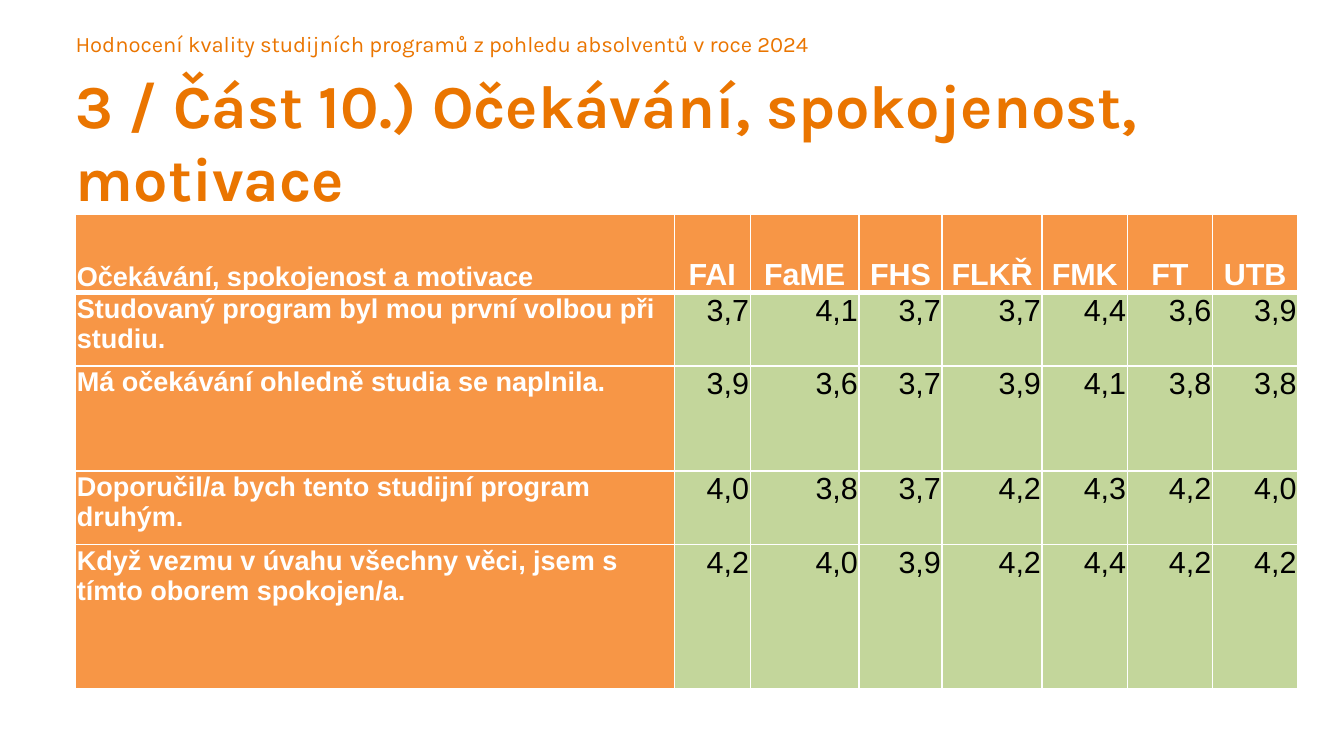
from pptx import Presentation
from pptx.dml.color import RGBColor
from pptx.enum.text import MSO_ANCHOR as ANCHOR, MSO_AUTO_SIZE as AUTO, PP_ALIGN as ALIGN
from pptx.oxml.ns import qn
from pptx.util import Pt
from lxml.etree import SubElement

COLORS = {"brand": "EA7500", "label": "F79646", "value": "C3D69B",
          "white": "FFFFFF", "black": "000000"}

HEADER = ["Očekávání, spokojenost a motivace",
          "FAI", "FaME", "FHS", "FLKŘ", "FMK", "FT", "UTB"]
RATINGS = [
    ["Studovaný program byl mou první volbou při studiu.",
     "3,7", "4,1", "3,7", "3,7", "4,4", "3,6", "3,9"],
    ["Má očekávání ohledně studia se naplnila.",
     "3,9", "3,6", "3,7", "3,9", "4,1", "3,8", "3,8"],
    ["Doporučil/a bych tento studijní program druhým.",
     "4,0", "3,8", "3,7", "4,2", "4,3", "4,2", "4,0"],
    ["Když vezmu v úvahu všechny věci, jsem s tímto oborem spokojen/a.",
     "4,2", "4,0", "3,9", "4,2", "4,4", "4,2", "4,2"],
]
COL_WIDTHS = [353.5, 44.8, 64.3, 49, 59.1, 50.3, 50.3, 50.3]
ROW_HEIGHTS = [46, 43.4, 62, 43.4, 85]

LABEL = {"size": 16, "bold": True, "color": "white", "fill": "label",
         "align": ALIGN.LEFT, "anchor": ANCHOR.TOP, "margins": (0.75, 0.75, 0.75, 0)}
CORNER = {**LABEL, "anchor": ANCHOR.BOTTOM}
FACULTY = {**CORNER, "size": 18, "align": ALIGN.CENTER, "spacing": 1.5,
           "margins": (3.6, 0, 3.6, 0)}
VALUE = {**LABEL, "size": 18, "bold": False, "color": "black", "fill": "value",
         "align": ALIGN.RIGHT}


def rgb(name):
    return RGBColor.from_string(COLORS[name])


def set_margins(target, margins):
    for side, margin in zip(("left", "top", "right", "bottom"), margins):
        setattr(target, f"margin_{side}", Pt(margin))


def write(tf, text, font, size, bold, color, align=ALIGN.LEFT, spacing=None):
    p = tf.paragraphs[0]
    p.alignment = align
    if spacing:
        p.line_spacing = spacing
    r = p.add_run()
    r.text = text
    for name, value in {"name": font, "size": Pt(size), "bold": bold}.items():
        setattr(r.font, name, value)
    r.font.color.rgb = rgb(color)


def fill_heading(sp, box, text, size, bold):
    sp.left, sp.top, sp.width, sp.height = map(Pt, box)
    tf = sp.text_frame
    for name, value in {"word_wrap": True, "auto_size": AUTO.NONE,
                        "vertical_anchor": ANCHOR.TOP}.items():
        setattr(tf, name, value)
    set_margins(tf, (0, 0, 0, 0))
    write(tf, text, "Karla", size, bold, "brand")


def add_borders(cell, widths):
    """Draw white cell borders; widths maps each side (L, R, T, B) to points."""
    tcPr = cell._tc.get_or_add_tcPr()
    for side, width in widths.items():
        ln = SubElement(tcPr, qn(f"a:ln{side}"), w=str(Pt(width)))
        fill = SubElement(ln, qn("a:solidFill"))
        SubElement(fill, qn("a:srgbClr"), val=COLORS["white"])


def format_cell(cell, text, style, borders):
    add_borders(cell, borders)
    cell.fill.solid()
    cell.fill.fore_color.rgb = rgb(style["fill"])
    cell.vertical_anchor = style["anchor"]
    set_margins(cell, style["margins"])
    write(cell.text_frame, text, "Arial", style["size"], style["bold"],
          style["color"], style["align"], style.get("spacing"))


def add_ratings_table(s, left, top):
    rows = [HEADER, *RATINGS]
    table = s.shapes.add_table(len(rows), len(HEADER), Pt(left), Pt(top),
                               Pt(sum(COL_WIDTHS)), Pt(sum(ROW_HEIGHTS))).table
    table.horz_banding = False
    for col, width in zip(table.columns, COL_WIDTHS):
        col.width = Pt(width)
    for row, height in zip(table.rows, ROW_HEIGHTS):
        row.height = Pt(height)
    for i, texts in enumerate(rows):
        first, others = (CORNER, FACULTY) if i == 0 else (LABEL, VALUE)
        borders = {"L": 1, "R": 1, "T": 3 if i == 1 else 1, "B": 3 if i == 0 else 1}
        for j, text in enumerate(texts):
            format_cell(table.cell(i, j), text, others if j else first, borders)


def build_ratings_slide(prs, left):
    s = prs.slides.add_slide(prs.slide_layouts[5])
    fill_heading(s.shapes.add_textbox(0, 0, 0, 0), (left, 18, 714, 16),
                 "Hodnocení kvality studijních programů z pohledu absolventů v roce 2024",
                 13, False)
    fill_heading(s.shapes.title, (left, 39.6, 733, 174),
                 "3 / Část 10.) Očekávání, spokojenost, motivace", 36, True)
    add_ratings_table(s, left, 126.7)


def main():
    prs = Presentation()
    prs.slide_width, prs.slide_height = Pt(793.44), Pt(446.4)
    build_ratings_slide(prs, 44.64)
    prs.save("out.pptx")


if __name__ == "__main__":
    main()
